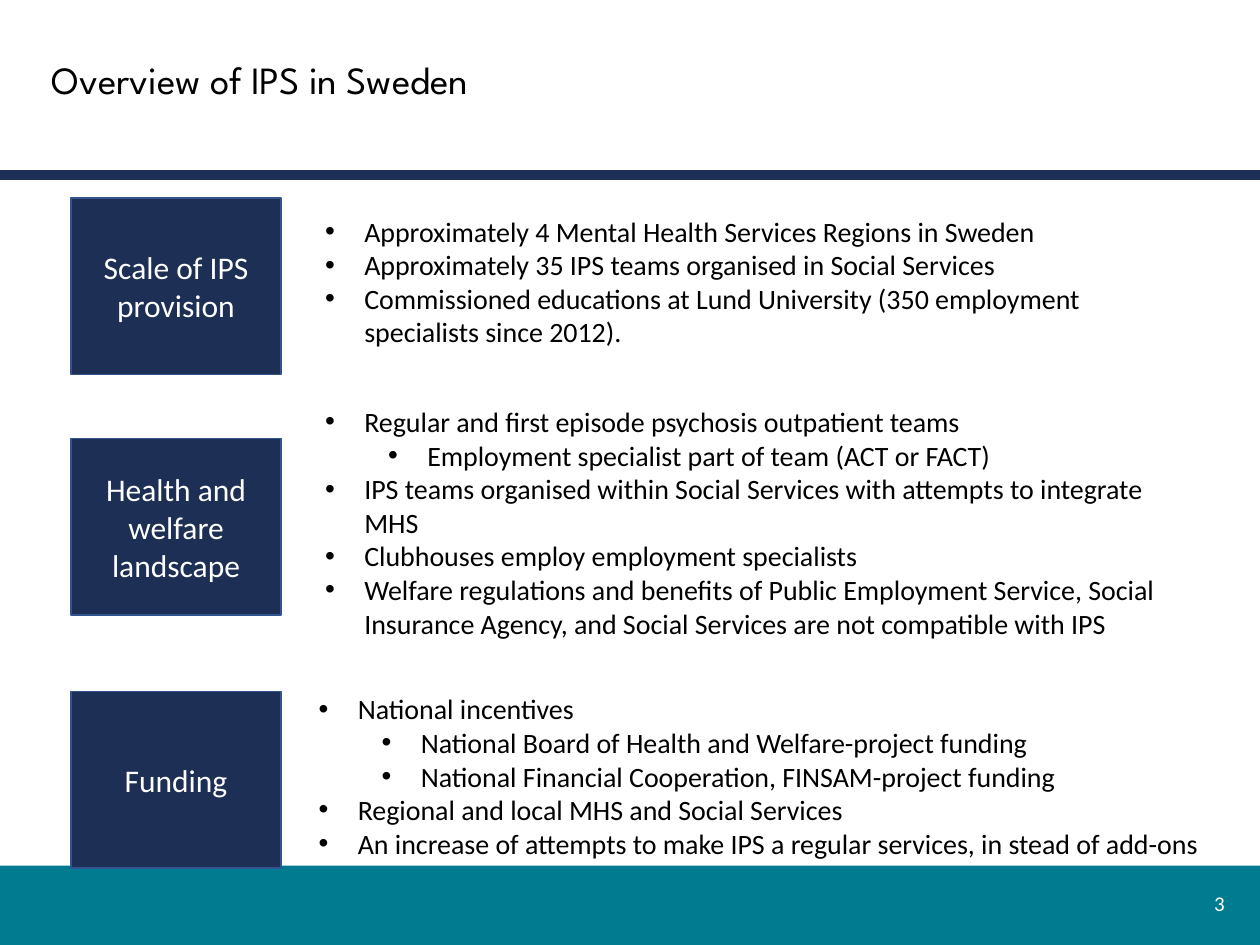
from lxml.etree import SubElement
from pptx import Presentation
from pptx.dml.color import RGBColor
from pptx.enum.shapes import MSO_CONNECTOR, MSO_SHAPE
from pptx.enum.text import MSO_ANCHOR, MSO_AUTO_SIZE, PP_ALIGN
from pptx.oxml.ns import qn
from pptx.util import Cm, Pt

NAVY = RGBColor(0x1D, 0x2F, 0x54)
BLUE = RGBColor(0x32, 0x54, 0x91)
TEAL = RGBColor(0x00, 0x7B, 0x90)
BLACK = RGBColor(0x00, 0x00, 0x00)
WHITE = RGBColor(0xFF, 0xFF, 0xFF)

WIDTH, HEIGHT = 25.4, 19.05
COMPARISON_LAYOUT = 4
BULLET_INDENT, LEVEL_STEP = 0.79, 1.27

# Each topic: label, label top, placeholder idx, list box, (level, text) items
TOPICS = [
    ("Scale of IPS provision", 3.99, 1, (6.3, 4.19, 17.55, 3.56), [
        (0, "Approximately 4 Mental Health Services Regions in Sweden"),
        (0, "Approximately 35 IPS teams organised in Social Services"),
        (0, "Commissioned educations at Lund University (350 employment "
            "specialists since 2012)."),
    ]),
    ("Health and welfare landscape", 8.84, 2, (6.3, 8.03, 17.55, 3.56), [
        (0, "Regular and first episode psychosis outpatient teams"),
        (1, "Employment specialist part of team (ACT or FACT)"),
        (0, "IPS teams organised within Social Services with attempts to "
            "integrate MHS"),
        (0, "Clubhouses employ employment specialists"),
        (0, "Welfare regulations and benefits of Public Employment Service, "
            "Social Insurance Agency, and Social Services are not compatible "
            "with IPS"),
    ]),
    ("Funding", 13.94, 4, (6.17, 13.82, 19.2, 3.56), [
        (0, "National incentives"),
        (1, "National Board of Health and Welfare-project funding"),
        (1, "National Financial Cooperation, FINSAM-project funding"),
        (0, "Regional and local MHS and Social Services"),
        (0, "An increase of attempts to make IPS a regular services, "
            "in stead of add-ons"),
    ]),
]


def place(sp, box):
    sp.left, sp.top, sp.width, sp.height = (Cm(v) for v in box)


def format_frame(tf, anchor):
    tf.word_wrap = True
    tf.auto_size = MSO_AUTO_SIZE.NONE
    tf.vertical_anchor = anchor


def format_paragraph(p, size, color, align=PP_ALIGN.LEFT, font="Calibri"):
    p.alignment = align
    for r in p.runs:
        r.font.name = font
        r.font.size = Pt(size)
        r.font.bold = False
        r.font.color.rgb = color


def add_rect(slide, box, fill, line=None):
    sp = slide.shapes.add_shape(MSO_SHAPE.RECTANGLE, *(Cm(v) for v in box))
    sp.shadow.inherit = False
    sp.fill.solid()
    sp.fill.fore_color.rgb = fill
    if line is None:
        sp.line.fill.background()
    else:
        sp.line.color.rgb = line
        sp.line.width = Pt(1)
    return sp


def add_rule(slide, y):
    line = slide.shapes.add_connector(
        MSO_CONNECTOR.STRAIGHT, 0, Cm(y), Cm(WIDTH), Cm(y))
    line.line.color.rgb = NAVY
    line.line.width = Pt(6)
    SubElement(line._element.spPr, qn("a:effectLst"))


def add_label(slide, text, top):
    sp = add_rect(slide, (1.43, top, 4.24, 3.56), NAVY, BLUE)
    tf = sp.text_frame
    tf.text = text
    format_frame(tf, MSO_ANCHOR.MIDDLE)
    format_paragraph(tf.paragraphs[0], 18, WHITE, PP_ALIGN.CENTER)


def set_bullet(p, level):
    pPr = p._p.get_or_add_pPr()
    pPr.set("marL", str(Cm(BULLET_INDENT + level * LEVEL_STEP)))
    pPr.set("indent", str(-Cm(BULLET_INDENT)))
    SubElement(pPr, qn("a:buFont")).set("typeface", "Arial")
    SubElement(pPr, qn("a:buChar")).set("char", "•")


def fill_list(sp, box, items):
    place(sp, box)
    tf = sp.text_frame
    format_frame(tf, MSO_ANCHOR.TOP)
    for i, (level, text) in enumerate(items):
        p = tf.add_paragraph() if i else tf.paragraphs[0]
        p.text = text
        p.level = level
        p.line_spacing = 1.0
        p.space_before = p.space_after = Pt(0)
        format_paragraph(p, 16, BLACK)
        set_bullet(p, level)


def fill_title(sp, text):
    place(sp, (0.79, 0.58, 23.88, 2.13))
    tf = sp.text_frame
    tf.text = text
    format_frame(tf, MSO_ANCHOR.MIDDLE)
    tf.paragraphs[0].line_spacing = 0.9
    format_paragraph(tf.paragraphs[0], 22, BLACK, font="League Spartan")


def add_page_number(slide, number):
    box = (23.85, 17.7, 1.09, 1.02)
    tf = slide.shapes.add_textbox(*(Cm(v) for v in box)).text_frame
    tf.text = number
    format_frame(tf, MSO_ANCHOR.MIDDLE)
    format_paragraph(tf.paragraphs[0], 12, WHITE, PP_ALIGN.RIGHT)


def main():
    prs = Presentation()
    prs.slide_width, prs.slide_height = Cm(WIDTH), Cm(HEIGHT)
    slide = prs.slides.add_slide(prs.slide_layouts[COMPARISON_LAYOUT])

    # Header and footer
    fill_title(slide.shapes.title, "Overview of IPS in Sweden")
    add_rule(slide, 3.53)
    add_rect(slide, (0, 17.45, WIDTH, 1.6), TEAL)
    add_page_number(slide, "3")

    # Topic labels with their lists
    bodies = {sp.placeholder_format.idx: sp for sp in slide.placeholders}
    for label, top, idx, box, items in TOPICS:
        add_label(slide, label, top)
        fill_list(bodies[idx], box, items)

    # Unused placeholder
    spare = bodies[3]._element
    spare.getparent().remove(spare)

    prs.save("out.pptx")


if __name__ == "__main__":
    main()
